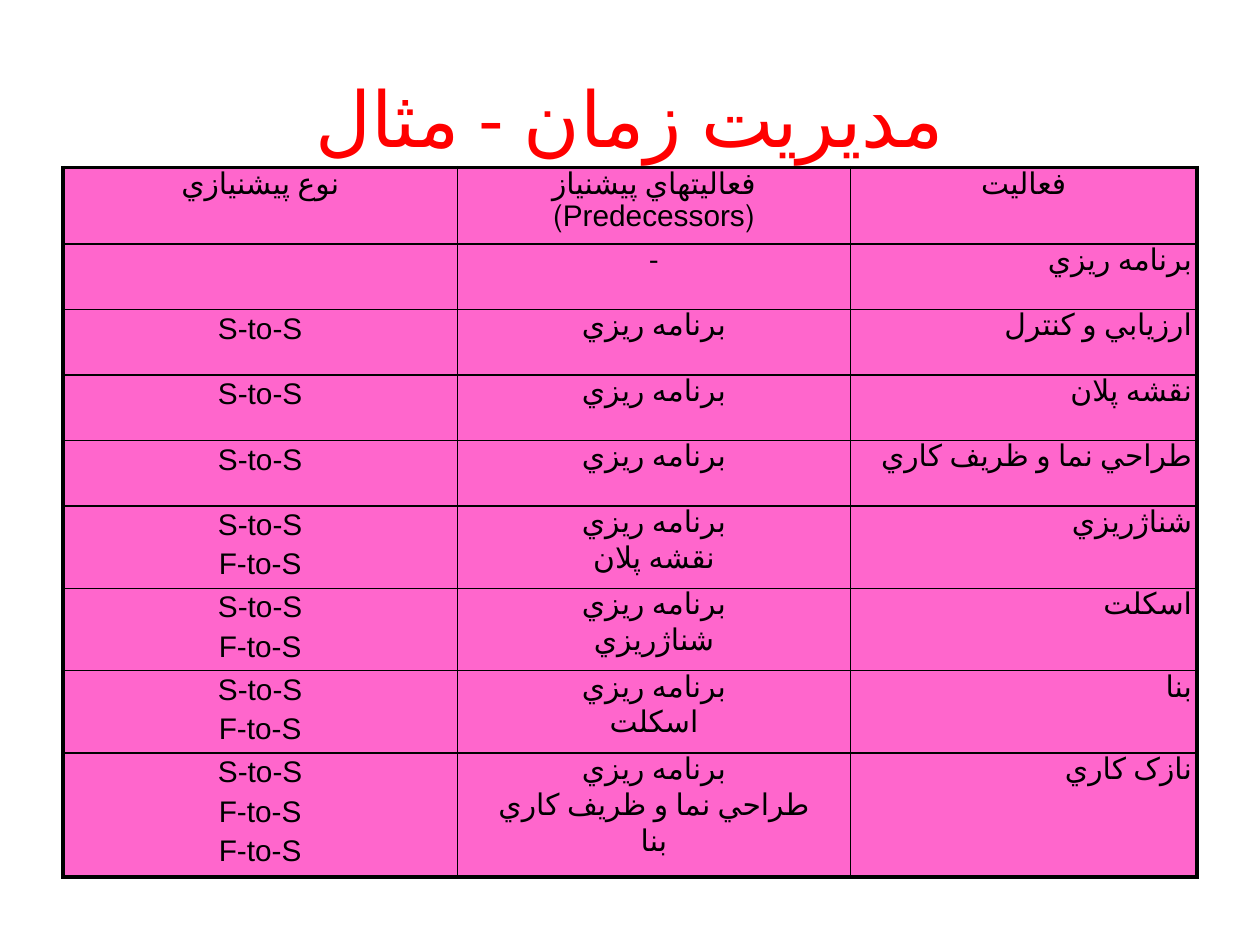
from dataclasses import dataclass

from lxml.etree import SubElement
from pptx import Presentation
from pptx.dml.color import RGBColor as RGB
from pptx.enum.text import MSO_ANCHOR as Anchor, PP_ALIGN as Align
from pptx.oxml.ns import qn
from pptx.util import Inches, Pt


@dataclass(frozen=True)
class Theme:
    font: str = "Arial"
    language: str = "fa-IR"
    title_size: float = 44
    cell_size: float = 17
    title_color: str = "FF0000"
    ink: str = "000000"
    cell_fill: str = "FF66CC"
    outer_line: float = 2.25
    inner_line: float = 1


THEME = Theme()
TITLE = "مديريت زمان - مثال"
PLANNING = "برنامه ريزي"
START, FINISH = "S-to-S", "F-to-S"

# Columns: dependency types, predecessors, activity
HEADER = (["نوع پيشنيازي"], ["فعاليتهاي پيشنياز (Predecessors)"], "فعاليت")
ACTIVITIES = [
    ([], ["-"], PLANNING),
    ([START], [PLANNING], "ارزيابي و کنترل"),
    ([START], [PLANNING], "نقشه پلان"),
    ([START], [PLANNING], "طراحي نما و ظريف کاري"),
    ([START, FINISH], [PLANNING, "نقشه پلان"], "شناژريزي"),
    ([START, FINISH], [PLANNING, "شناژريزي"], "اسکلت"),
    ([START, FINISH], [PLANNING, "اسکلت"], "بنا"),
    ([START, FINISH, FINISH],
     [PLANNING, "طراحي نما و ظريف کاري", "بنا"], "نازک کاري"),
]
COLUMN_WIDTHS = (3.13, 3.12, 2.75)
HEADER_HEIGHT, MIN_HEIGHT, LINE_HEIGHT = 0.55, 0.52, 0.31


def write_text(frame, lines, *, size, color, align=Align.CENTER, space_before=0):
    """Write right-to-left paragraphs; space_before is a percentage of a line."""
    for index, line in enumerate(lines):
        paragraph = frame.add_paragraph() if index else frame.paragraphs[0]
        paragraph.alignment = align
        properties = paragraph._p.get_or_add_pPr()
        properties.set("rtl", "1")
        if space_before:
            spacing = SubElement(properties, qn("a:spcBef"))
            SubElement(spacing, qn("a:spcPct"), val=str(space_before * 1000))
        run = paragraph.add_run()
        run.text = line
        run.font.name = THEME.font
        run.font.size = Pt(size)
        run.font.color.rgb = RGB.from_string(color)
        run._r.get_or_add_rPr().set("lang", THEME.language)


def add_title(slide):
    title = slide.shapes.add_textbox(Inches(0.5), Inches(0.3), Inches(9), Inches(1.25))
    frame = title.text_frame
    frame.word_wrap = True
    frame.vertical_anchor = Anchor.MIDDLE
    write_text(frame, [TITLE], size=THEME.title_size, color=THEME.title_color)


def set_borders(cell, outer_sides):
    """Draw all four sides, heavier where the side is on the table's edge."""
    properties = cell._tc.get_or_add_tcPr()
    for index, side in enumerate("LRTB"):
        width = THEME.outer_line if side in outer_sides else THEME.inner_line
        line = SubElement(properties, qn(f"a:ln{side}"), w=str(Pt(width)))
        fill = SubElement(line, qn("a:solidFill"))
        SubElement(fill, qn("a:srgbClr"), val=THEME.ink)
        properties.remove(line)
        properties.insert(index, line)


def fill_cell(cell, lines, align, outer_sides):
    cell.margin_left = cell.margin_right = Inches(0.04)
    cell.margin_top = cell.margin_bottom = Inches(0.02)
    cell.fill.solid()
    cell.fill.fore_color.rgb = RGB.from_string(THEME.cell_fill)
    set_borders(cell, outer_sides)
    write_text(cell.text_frame, lines, size=THEME.cell_size, color=THEME.ink,
               align=align, space_before=20)


def add_activity_table(slide):
    rows = [HEADER, *ACTIVITIES]
    heights = [HEADER_HEIGHT] + [
        max(MIN_HEIGHT, LINE_HEIGHT * len(predecessors))
        for _, predecessors, _ in ACTIVITIES
    ]
    table = slide.shapes.add_table(
        len(rows), len(COLUMN_WIDTHS), Inches(0.5), Inches(1.33),
        Inches(sum(COLUMN_WIDTHS)), Inches(sum(heights))).table
    table.first_row = table.horz_banding = False
    for column, width in zip(table.columns, COLUMN_WIDTHS):
        column.width = Inches(width)

    last_row, last_column = len(rows) - 1, len(COLUMN_WIDTHS) - 1
    for r, (types, predecessors, activity) in enumerate(rows):
        table.rows[r].height = Inches(heights[r])
        for c, lines in enumerate((types, predecessors, [activity])):
            edges = {"L": c == 0, "R": c == last_column, "T": r == 0, "B": r == last_row}
            outer_sides = [side for side, on_edge in edges.items() if on_edge]
            align = Align.RIGHT if r and c == last_column else Align.CENTER
            fill_cell(table.cell(r, c), lines, align, outer_sides)


def main():
    deck = Presentation()
    deck.slide_width, deck.slide_height = Inches(10), Inches(7.5)
    slide = deck.slides.add_slide(deck.slide_layouts[6])
    add_title(slide)
    add_activity_table(slide)
    deck.save("out.pptx")


if __name__ == "__main__":
    main()
